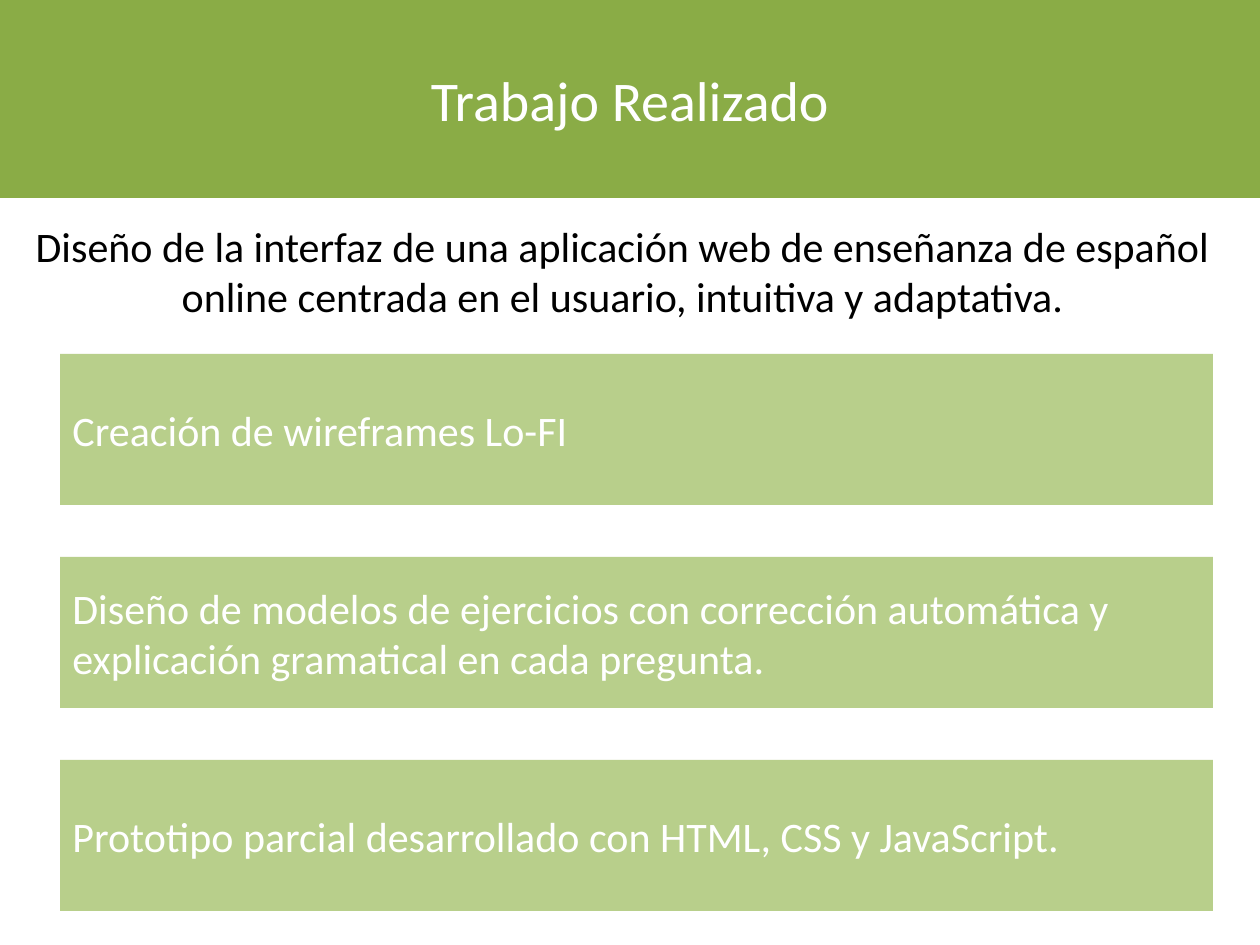
from pptx import Presentation
from pptx.dml.color import RGBColor as RGB
from pptx.enum.shapes import MSO_SHAPE as Shape
from pptx.enum.text import MSO_ANCHOR as Anchor, MSO_AUTO_SIZE as Fit, PP_ALIGN as Align
from pptx.util import Emu, Pt

SCALE = 914400 / 126
COLORS = {"band": "8AAC46", "card": "B8CF8B", "light": "FFFFFF", "dark": "000000"}
TASKS = [
    "Creación de wireframes Lo-FI",
    "Diseño de modelos de ejercicios con corrección automática y "
    "explicación gramatical en cada pregunta.",
    "Prototipo parcial desarrollado con HTML, CSS y JavaScript.",
]


def px(n):
    return Emu(round(n * SCALE))


def write(frame, text, size=24, color="light", align=Align.LEFT, anchor=Anchor.MIDDLE):
    frame.word_wrap = True
    frame.auto_size = Fit.NONE
    frame.vertical_anchor = anchor
    para = frame.paragraphs[0]
    para.alignment = align
    run = para.add_run()
    run.text = text
    run.font.name = "Calibri"
    run.font.size = Pt(size)
    run.font.color.rgb = RGB.from_string(COLORS[color])


def block(slide, box, color):
    rect = slide.shapes.add_shape(Shape.RECTANGLE, *map(px, box))
    rect.shadow.inherit = False
    rect.fill.solid()
    rect.fill.fore_color.rgb = RGB.from_string(COLORS[color])
    rect.line.fill.background()
    return rect


def header(slide, box, text):
    band = block(slide, box, "band")
    title = slide.shapes.title
    title.left, title.top, title.width, title.height = map(px, box)
    # The band goes behind the title
    title.element.addprevious(band.element)
    write(title.text_frame, text, size=32, align=Align.CENTER)


def intro(slide, box, text):
    note = slide.shapes.add_textbox(*map(px, box))
    write(note.text_frame, text, color="dark", align=Align.CENTER, anchor=Anchor.TOP)
    note.text_frame.auto_size = Fit.SHAPE_TO_FIT_TEXT


def cards(slide, box, items, gap):
    left, top, width, height = box
    tall = (height - gap * (len(items) - 1)) / len(items)
    for i, text in enumerate(items):
        card = block(slide, (left, top + i * (tall + gap), width, tall), "card")
        write(card.text_frame, text)


def main():
    deck = Presentation()
    deck.slide_width, deck.slide_height = px(1260), px(945)
    slide = deck.slides.add_slide(deck.slide_layouts[5])

    # Title band
    header(slide, (0, 0, 1260, 198), "Trabajo Realizado")
    # Goal of the project
    intro(slide, (0, 214, 1245, 152),
          "Diseño de la interfaz de una aplicación web de enseñanza de español "
          "online centrada en el usuario, intuitiva y adaptativa.")
    # Work done
    cards(slide, (60, 354, 1153, 557), TASKS, gap=52)

    deck.save("out.pptx")


if __name__ == "__main__":
    main()
